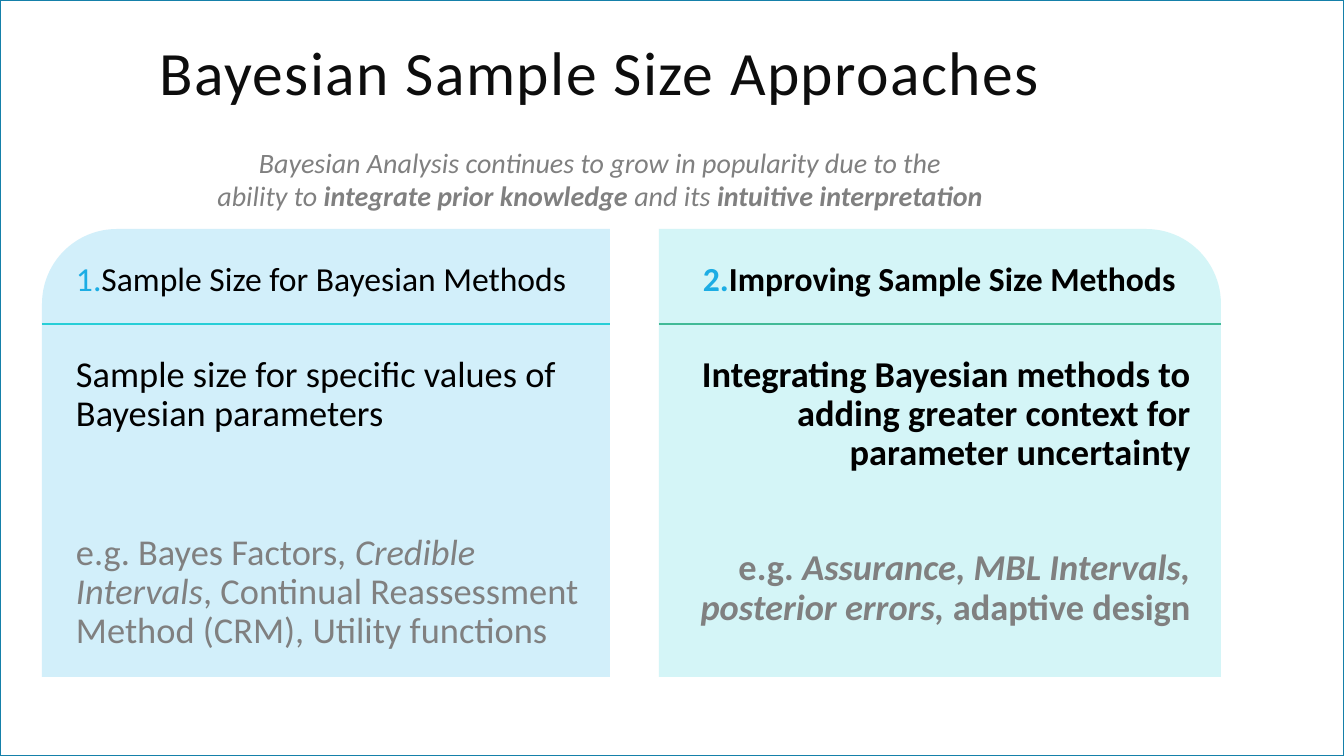
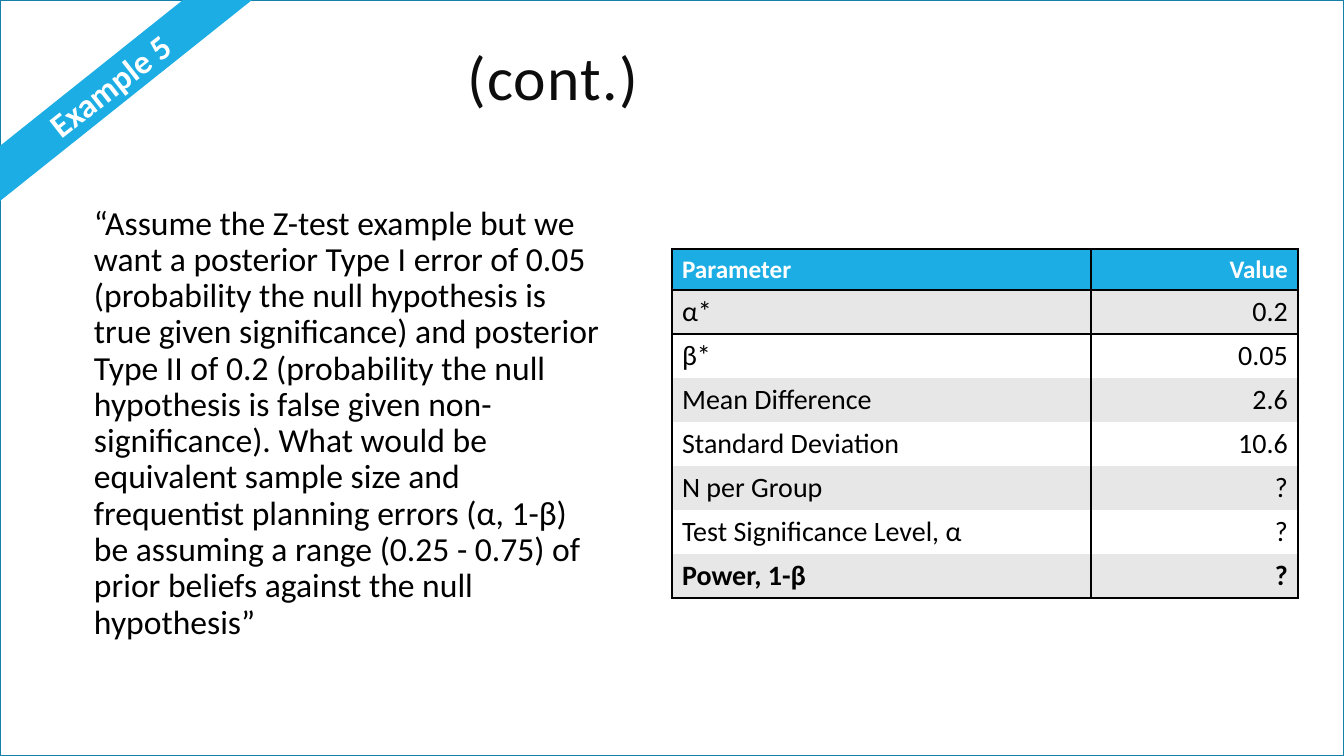
from lxml.etree import SubElement as Sub
from pptx import Presentation
from pptx.dml.color import RGBColor as RGB
from pptx.enum.shapes import MSO_CONNECTOR as LINK, MSO_SHAPE as FORM
from pptx.enum.text import MSO_ANCHOR as ANCHOR, PP_ALIGN as ALIGN
from pptx.oxml.ns import qn
from pptx.util import Emu, Pt

INK = RGB(0x00, 0x00, 0x00)
DARK = RGB(0x0D, 0x0D, 0x0D)
GRAY = RGB(0x80, 0x80, 0x80)
WHITE = RGB(0xFF, 0xFF, 0xFF)
BAND = RGB(0xE7, 0xE7, 0xE7)
BLUE = RGB(0x1C, 0xAD, 0xE4)
EDGE = RGB(0x15, 0x80, 0xA9)
SKY = RGB(0xD2, 0xEF, 0xFA)
MINT = RGB(0xD4, 0xF5, 0xF7)
TEAL = RGB(0x27, 0xCE, 0xD7)
GREEN = RGB(0x42, 0xBA, 0x97)
PLAIN = "{2D5ABB26-0587-4C30-8999-92F81FD0307C}"
SCALE = 914400 / 100.8
WIDE, HIGH = 1344, 756


def px(*nums):
    return [Emu(round(n * SCALE)) for n in nums]


def write(host, text, box=None, size=24, color=INK, bold=False, ital=False,
          align=ALIGN.LEFT, lead=0.9, gap=0, pad=(5, 5), mid=False,
          track=0, num=0, hang=0):
    if box:
        host = host.add_textbox(*px(*box))
        frame = host.text_frame
        frame.word_wrap = True
        frame.margin_left, frame.margin_right = px(*pad)
        frame.margin_top = frame.margin_bottom = px(5)[0]
        frame.vertical_anchor = ANCHOR.MIDDLE if mid else ANCHOR.TOP
    else:
        frame = host.text_frame
    para = frame.add_paragraph() if frame.text else frame.paragraphs[0]
    para.alignment = align
    para.line_spacing = lead
    if gap:
        para.space_before = Pt(gap)
    if num:
        prop = para._p.get_or_add_pPr()
        prop.set("marL", str(px(hang)[0]))
        prop.set("indent", str(px(-hang)[0]))
        Sub(Sub(prop, qn("a:buClr")), qn("a:srgbClr"), val=str(BLUE))
        Sub(prop, qn("a:buAutoNum"), type="arabicPeriod", startAt=str(num))
    for part, mark in [(text, "")] if isinstance(text, str) else text:
        if part == "\n":
            para.add_line_break()
            continue
        run = para.add_run()
        run.text = part
        font = run.font
        font.name, font.size = "Calibri", Pt(size)
        font.color.rgb = color
        font.bold = bold or "b" in mark
        font.italic = ital or "i" in mark
        if track:
            run._r.get_or_add_rPr().set("spc", str(track))
    return host


deck = Presentation()
deck.slide_width, deck.slide_height = px(WIDE, HIGH)
pages = []
for title, left, top in [("Bayesian Sample Size Approaches", 97, -5), ("(cont.)", 50, 0)]:
    page = deck.slides.add_slide(deck.slide_layouts[6]).shapes
    rim = page.add_shape(FORM.RECTANGLE, *px(0, 0, WIDE, HIGH))
    rim.shadow.inherit = False
    rim.fill.background()
    rim.line.color.rgb = EDGE
    rim.line.width = Pt(1.25)
    write(page, title, (left, top, 1006, 165), size=44, color=DARK,
          align=ALIGN.CENTER, lead=0.8, pad=(10, 10), mid=True, track=100)
    pages.append(page)
first, second = pages

write(first, [("Bayesian Analysis continues to grow in popularity due to the", ""),
              ("\n", ""), ("ability to ", ""), ("integrate prior knowledge ", "b"),
              ("and its ", ""), ("intuitive interpretation", "b")],
      (39, 140, 1122, 78), size=20, color=GRAY, ital=True,
      align=ALIGN.CENTER, lead=1.0, pad=(10, 10))

cards = [
    (42, 568, SKY, TEAL, 71, 530, 71, 530, 19, False, ALIGN.LEFT, 71,
     "Sample Size for Bayesian Methods",
     "Sample size for specific values of Bayesian parameters",
     [("e.g. Bayes Factors, ", ""), ("Credible Intervals", "i"),
      (", Continual Reassessment Method (CRM), Utility functions", "")]),
    (659, 562, MINT, GREEN, 698, 502, 680, 516, 10, True, ALIGN.RIGHT, 54,
     "Improving Sample Size Methods",
     "Integrating Bayesian methods to adding greater context for parameter uncertainty",
     [("e.g. ", ""), ("Assurance, MBL Intervals, posterior errors, ", "i"),
      ("adaptive design", "")]),
]
for num, (left, wide, tint, hue, hx, hw, bx, bw, hang, bold, side, gap,
          head, body, note) in enumerate(cards, 1):
    card = first.add_shape(FORM.SNIP_ROUND_RECTANGLE, *px(left, 229, wide, 448))
    card.adjustments[0], card.adjustments[1] = 0.167, 0
    card.shadow.inherit = False
    card.fill.solid()
    card.fill.fore_color.rgb = tint
    card.line.fill.background()
    if side == ALIGN.RIGHT:
        card._element.spPr.xfrm.set("flipH", "1")
    rule = first.add_connector(LINK.STRAIGHT, *px(left, 324, left + wide, 324))
    rule.line.color.rgb = hue
    rule.line.width = Pt(0.75)
    Sub(rule._element.spPr, qn("a:effectLst"))
    write(first, head, (hx, 257, hw, 75), bold=bold, num=num, hang=hang)
    text = write(first, body, (bx, 351, bw, 307), size=26, bold=bold, align=side)
    write(text, note, size=26, color=GRAY, bold=bold, align=side, gap=gap)

write(second, "“Assume the Z-test example but we want a posterior Type I error of 0.05 "
      "(probability the null hypothesis is true given significance) and posterior "
      "Type II of 0.2 (probability the null hypothesis is false given "
      "non-significance). What would be equivalent sample size and frequentist "
      "planning errors (α, 1-β) be assuming a range (0.25 - 0.75) of prior beliefs "
      "against the null hypothesis”", (79, 201, 529, 444), pad=(15, 5))

rows = [("Parameter", "Value"), ("α*", "0.2"), ("β*", "0.05"),
        ("Mean Difference", "2.6"), ("Standard Deviation", "10.6"),
        ("N per Group", "?"), ("Test Significance Level, α", "?"),
        ("Power, 1-β", "?")]
last = len(rows) - 1
grid = second.add_table(len(rows), 2, *px(672, 249, 626, 349)).table
grid._tbl.tblPr.find(qn("a:tableStyleId")).text = PLAIN
grid.columns[0].width, grid.columns[1].width = px(419, 207)
for r, row in enumerate(rows):
    grid.rows[r].height = px(44 if r else 41)[0]
    for c, word in enumerate(row):
        cell = grid.cell(r, c)
        write(cell, word, size=20 if r else 18, color=INK if r else WHITE,
              bold=r in (0, last), align=ALIGN.RIGHT if c else ALIGN.LEFT, lead=1.0)
        sides = [("L", 1 if c else 2), ("R", 2 if c else 1)]
        if r < 2:
            sides.append(("T", 2))
        if r in (0, last):
            sides.append(("B", 2))
        prop = cell._tc.get_or_add_tcPr()
        for side, width in sides:
            edge = Sub(prop, qn("a:ln" + side), w=str(Pt(width)))
            Sub(Sub(edge, qn("a:solidFill")), qn("a:srgbClr"), val=str(INK))
        cell.fill.solid()
        cell.fill.fore_color.rgb = BLUE if r == 0 else BAND if r % 2 else WHITE

flag = second.add_group_shape().shapes
strip = flag.add_shape(FORM.DIAGONAL_STRIPE, *px(0, 0, 252, 201))
strip.adjustments[0] = 0.726
strip.shadow.inherit = False
strip.fill.solid()
strip.fill.fore_color.rgb = BLUE
strip.line.fill.background()
label = write(flag, "Example 5", (-3, 65, 233, 67), color=WHITE, bold=True,
              align=ALIGN.CENTER, pad=(15, 5))
label.rotation = 321.9

deck.save("out.pptx")
